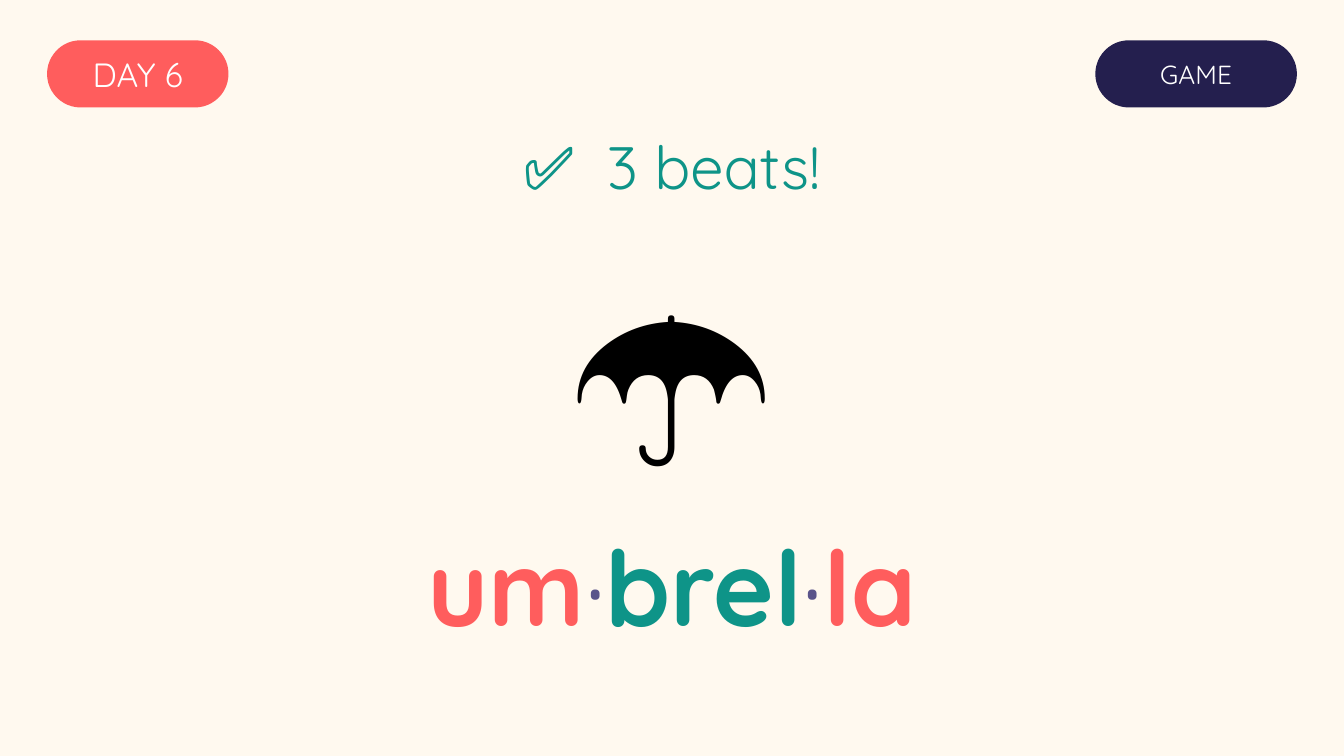
from pptx import Presentation
from pptx.dml.color import RGBColor
from pptx.enum.shapes import MSO_SHAPE
from pptx.enum.text import MSO_ANCHOR, MSO_AUTO_SIZE, PP_ALIGN
from pptx.util import Emu, Pt

PILL = MSO_SHAPE.ROUNDED_RECTANGLE
TOP, MIDDLE = MSO_ANCHOR.TOP, MSO_ANCHOR.MIDDLE
NO_AUTOFIT = MSO_AUTO_SIZE.NONE
CENTER = PP_ALIGN.CENTER

PX = 4572  # 200 px to the inch
SLIDE_W, SLIDE_H = 2000, 1125
TITLE_ONLY = 5
COLORS = {
    "cream": "FFF9EF",
    "coral": "FF5D5D",
    "navy": "241F4E",
    "teal": "0E9488",
    "violet": "5A548A",
    "white": "FFFFFF",
    "black": "000000",
}


def px(length):
    return Emu(length * PX)


def rgb(name):
    return RGBColor.from_string(COLORS[name])


def write(shape, text, size, color="black", font="Quicksand", bold=False,
          anchor=MIDDLE, margins=(20, 10), tracking=0):
    """Append a run of text to the centred first paragraph of a shape."""
    frame = shape.text_frame
    frame.word_wrap = True
    frame.auto_size = NO_AUTOFIT
    frame.vertical_anchor = anchor
    frame.margin_left = frame.margin_right = px(margins[0])
    frame.margin_top = frame.margin_bottom = px(margins[1])
    paragraph = frame.paragraphs[0]
    paragraph.alignment = CENTER
    run = paragraph.add_run()
    run.text = text
    run.font.name = font
    run.font.size = Pt(size)
    run.font.bold = bold
    run.font.color.rgb = rgb(color)
    if tracking:
        run._r.get_or_add_rPr().set("spc", str(tracking * 100))


def add_pill(slide, box, label, size, fill):
    pill = slide.shapes.add_shape(PILL, *map(px, box))
    pill.adjustments[0] = 0.5
    pill.shadow.inherit = False
    pill.fill.solid()
    pill.fill.fore_color.rgb = rgb(fill)
    pill.line.fill.background()
    write(pill, label, size, color="white", margins=(0, 0))


def add_header(slide, box):
    left, top, width, height = box
    day_width, game_width = 270, 300
    add_pill(slide, (left, top, day_width, height), "DAY 6", 18, "coral")
    add_pill(slide, (left + width - game_width, top, game_width, height),
             "GAME", 14, "navy")


def add_answer(slide, box):
    answer = slide.shapes.title
    answer.left, answer.top, answer.width, answer.height = map(px, box)
    write(answer, "✅", 32, color="teal")
    # Wider tracking on the space sets the check mark apart
    write(answer, " ", 32, color="teal", tracking=8)
    write(answer, "3 beats!", 32, color="teal")


def add_umbrella(slide, box):
    umbrella = slide.shapes.add_textbox(*map(px, box))
    write(umbrella, "☂️", 105, font="Calibri", anchor=TOP)


def add_syllables(slide, box, syllables):
    word = slide.shapes.add_textbox(*map(px, box))
    for index, syllable in enumerate(syllables):
        if index:
            write(word, "·", 56, color="violet")
        write(word, syllable, 56, color=("coral", "teal")[index % 2], bold=True)


def main():
    deck = Presentation()
    deck.slide_width, deck.slide_height = px(SLIDE_W), px(SLIDE_H)
    slide = deck.slides.add_slide(deck.slide_layouts[TITLE_ONLY])
    slide.background.fill.solid()
    slide.background.fill.fore_color.rgb = rgb("cream")

    # Day and activity labels
    margin = 70
    add_header(slide, (margin, 60, SLIDE_W - 2 * margin, 100))
    # Answer, pictogram and the word split into beats
    add_answer(slide, (0, 184, SLIDE_W, 124))
    add_umbrella(slide, (0, 330, SLIDE_W, 320))
    add_syllables(slide, (0, 780, SLIDE_W, 180), ("um", "brel", "la"))

    deck.save("out.pptx")


if __name__ == "__main__":
    main()
